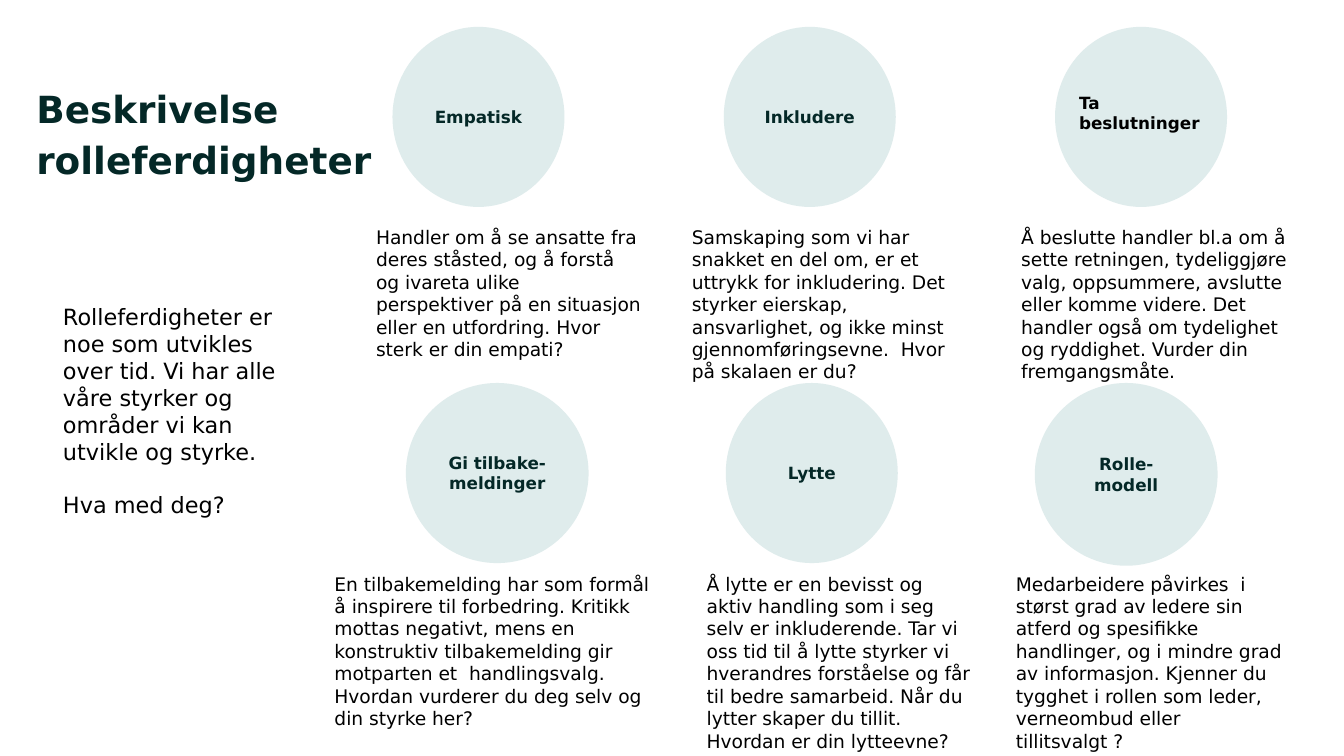
"""Build the slide on role skills: six circles with descriptions and an introduction."""
from dataclasses import dataclass

from pptx import Presentation
from pptx.dml.color import RGBColor
from pptx.enum.shapes import MSO_SHAPE as Shape
from pptx.enum.text import MSO_ANCHOR as Anchor, MSO_AUTO_SIZE as AutoSize, PP_ALIGN as Align
from pptx.util import Pt


@dataclass(frozen=True)
class Theme:
    font: str = "DejaVu Sans"
    dark: str = "042827"
    black: str = "000000"
    circle: str = "DFECEC"
    title: int = 20
    intro: int = 12
    body: int = 10
    label: int = 9


theme = Theme()
PX = 4572


def box(*lengths):
    return [length * PX for length in lengths]


def write(shape, text, size, color, bold=False, align=Align.LEFT, inset=None):
    text_frame = shape.text_frame
    text_frame.word_wrap = True
    text_frame.text = text
    if inset is not None:
        text_frame.margin_left = text_frame.margin_right = inset * PX
        text_frame.margin_top = text_frame.margin_bottom = inset * PX
    for paragraph in text_frame.paragraphs:
        paragraph.alignment = align
        for run in paragraph.runs:
            run.font.name = theme.font
            run.font.size = Pt(size)
            run.font.bold = bold
            run.font.color.rgb = RGBColor.from_string(color)


presentation = Presentation()
presentation.slide_width, presentation.slide_height = box(2000, 1125)
slide = presentation.slides.add_slide(presentation.slide_layouts[5])
shapes = slide.shapes

circles = [
    ("Gi tilbake-meldinger", 604, 570, 272, 268),
    ("Rolle-\nmodell", 1540, 570, 272, 272),
    ("Lytte", 1080, 570, 256, 268),
    ("Empatisk", 584, 40, 256, 268),
    ("", 1570, 40, 256, 268),
    ("Inkludere", 1077, 40, 256, 268),
]
for label, *bounds in circles:
    circle = shapes.add_shape(Shape.OVAL, *box(*bounds))
    circle.shadow.inherit = False
    circle.fill.solid()
    circle.fill.fore_color.rgb = RGBColor.from_string(theme.circle)
    circle.line.fill.background()
    circle.text_frame.vertical_anchor = Anchor.MIDDLE
    if label:
        write(circle, label, theme.label, theme.dark, True, Align.CENTER, 20)

title = shapes.title
title.left, title.top, title.width, title.height = box(54, 118, 564, 154)
title.text_frame.vertical_anchor = Anchor.TOP
title.text_frame.auto_size = AutoSize.SHAPE_TO_FIT_TEXT
write(title, "Beskrivelse rolleferdigheter", theme.title, theme.dark, True, inset=0)
title.text_frame.paragraphs[0].line_spacing = 1.15

descriptions = [
    ("Å beslutte handler bl.a om å sette retningen, tydeliggjøre valg, oppsummere, avslutte "
     "eller komme videre. Det handler også om tydelighet og ryddighet. Vurder din "
     "fremgangsmåte.", 1500, 326, 446, 256),
    ("Samskaping som vi har snakket en del om, er et uttrykk for inkludering. Det styrker "
     "eierskap, ansvarlighet, og ikke minst gjennomføringsevne.  Hvor på skalaen er du?",
     1010, 326, 454, 256),
    ("Handler om å se ansatte fra deres ståsted, og å forstå og ivareta ulike perspektiver "
     "på en situasjon eller en utfordring. Hvor sterk er din empati?", 540, 326, 434, 256),
    ("En tilbakemelding har som formål å inspirere til forbedring. Kritikk mottas negativt, "
     "mens en konstruktiv tilbakemelding gir motparten et  handlingsvalg. Hvordan vurderer "
     "du deg selv og din styrke her?", 478, 842, 530, 256),
    ("Å lytte er en bevisst og aktiv handling som i seg selv er inkluderende. Tar vi oss tid "
     "til å lytte styrker vi hverandres forståelse og får til bedre samarbeid. Når du lytter "
     "skaper du tillit. Hvordan er din lytteevne?", 1032, 842, 436, 290),
    ("Medarbeidere påvirkes  i størst grad av ledere sin atferd og spesifikke handlinger, og "
     "i mindre grad av informasjon. Kjenner du tygghet i rollen som leder, verneombud eller "
     "tillitsvalgt ?", 1492, 842, 444, 290),
]
for description, *bounds in descriptions:
    text_box = shapes.add_textbox(*box(*bounds))
    text_box.text_frame.auto_size = AutoSize.SHAPE_TO_FIT_TEXT
    write(text_box, description, theme.body, theme.black)

introduction = shapes.add_textbox(*box(74, 442, 404, 356))
introduction.text_frame.auto_size = AutoSize.SHAPE_TO_FIT_TEXT
write(introduction, "Rolleferdigheter er noe som utvikles over tid. Vi har alle våre styrker og "
      "områder vi kan utvikle og styrke.\nHva med deg?", theme.intro, theme.black)
introduction.text_frame.paragraphs[1].space_before = Pt(14)

decision_label = shapes.add_textbox(*box(1586, 128, 256, 80))
decision_label.text_frame.auto_size = AutoSize.SHAPE_TO_FIT_TEXT
write(decision_label, "Ta beslutninger", theme.label, theme.black, True)

presentation.save("out.pptx")
